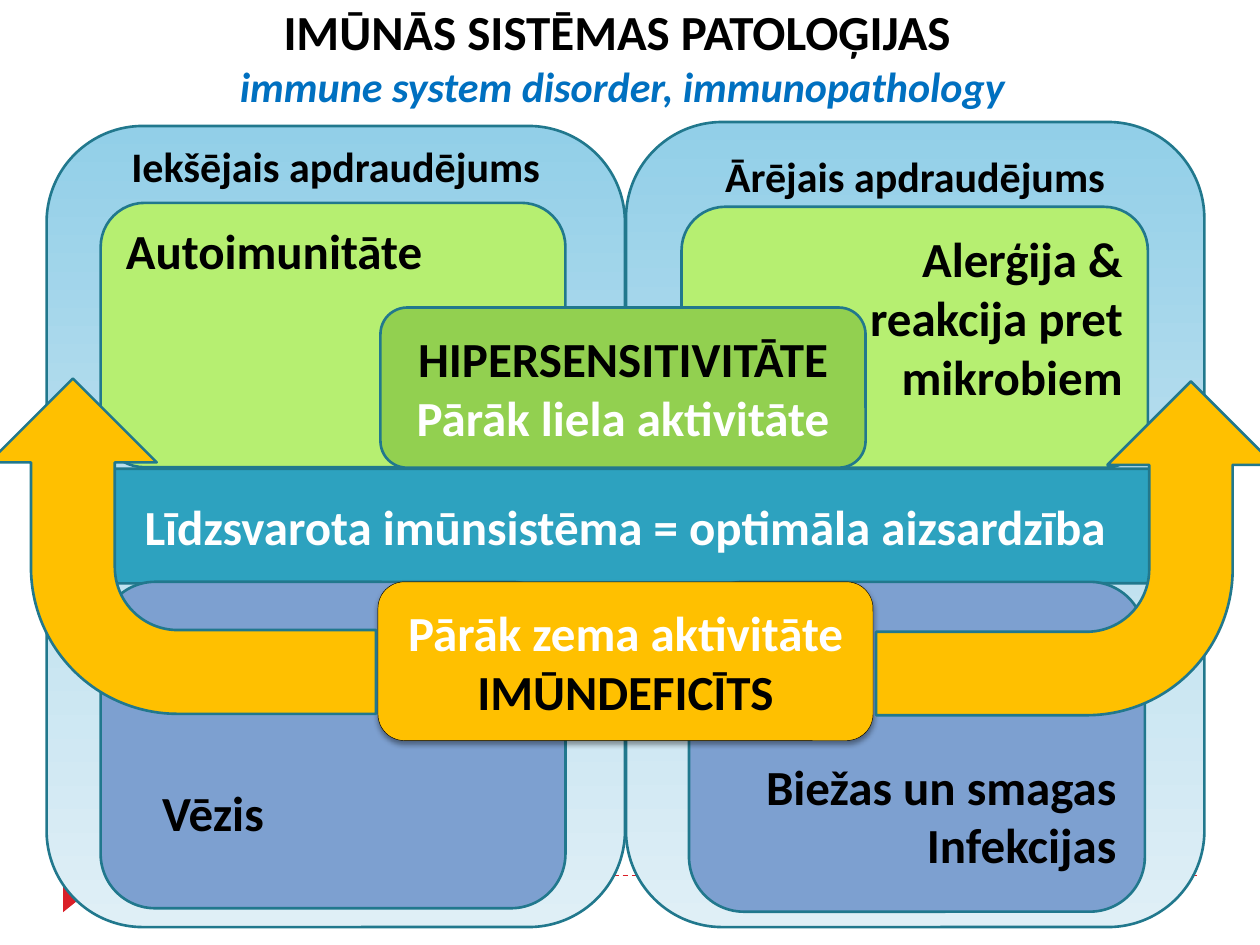
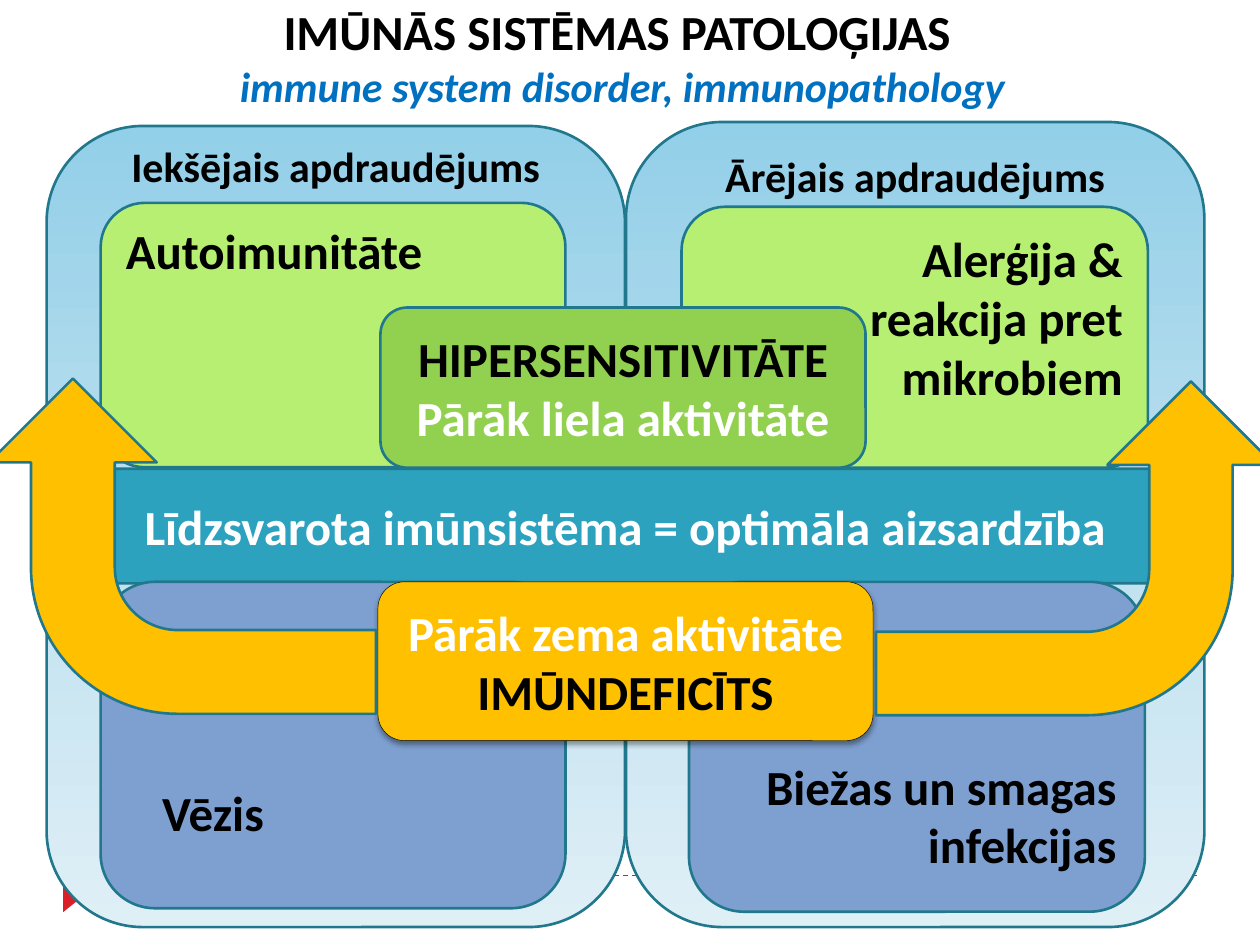
"""Build two slides that map disorders of the immune system."""
from copy import deepcopy
from dataclasses import dataclass

import lxml.etree
import pptx
import pptx.dml.color
import pptx.enum.dml
import pptx.enum.shapes
import pptx.enum.text
import pptx.oxml.ns
import pptx.util
from pptx.util import Cm

Align = pptx.enum.text.PP_ALIGN
Anchor = pptx.enum.text.MSO_ANCHOR
Preset = pptx.enum.shapes.MSO_SHAPE
qn = pptx.oxml.ns.qn


@dataclass(frozen=True)
class Theme:
    font: str = "Calibri"
    large: int = 28
    small: int = 24
    outline_width: float = 1.5
    black: str = "000000"
    white: str = "FFFFFF"
    subtitle: str = "0070C0"
    outline: str = "21788D"
    footer: str = "DA1F28"
    balance: str = "2DA2BF"
    overactive: str = "B6EF71"
    overactive_label: str = "92D050"
    underactive: str = "7DA0D0"
    deficiency: str = "FFC000"
    threat: tuple[str, ...] = ("92CFE8", "BDE0EF", "DFEFF6")


THEME = Theme()


@dataclass(frozen=True)
class Area:
    left: float
    top: float
    width: float
    height: float

    def lengths(self) -> tuple[int, ...]:
        return tuple(Cm(side) for side in (self.left, self.top, self.width, self.height))


@dataclass(frozen=True)
class Line:
    text: str
    color: str = THEME.black
    size: int = THEME.large
    italic: bool = False


@dataclass(frozen=True)
class Panel:
    area: Area
    fill: str | tuple[str, ...]
    lines: tuple[Line, ...]
    align: Align = Align.CENTER
    anchor: Anchor = Anchor.TOP
    inset_top: float = 0.13
    inset_left: float = 0.25
    outline: str = THEME.outline
    outline_width: float = THEME.outline_width
    shadow: bool = False


@dataclass(frozen=True)
class BentArrow:
    area: Area
    flipped: bool = False


TITLE_AREA = Area(1.12, 0.08, 22.86, 2.21)
TITLE = Line("IMŪNĀS SISTĒMAS PATOLOĢIJAS ")
SUBTITLE = Line("immune system disorder, immunopathology", THEME.subtitle, THEME.small, True)
ARROWS = (
    BentArrow(Area(0.3, 7.11, 6.76, 7.8)),
    BentArrow(Area(18.31, 7.04, 6.73, 8.03), flipped=True),
)


def immune_panels(infections: str) -> tuple[Panel, ...]:
    """List the panels from back to front."""
    return (
        Panel(Area(12.62, 2.46, 11.66, 16.23), THEME.threat,
              (Line("Ārējais apdraudējums", size=THEME.small),), inset_top=0),
        Panel(Area(0.94, 2.54, 11.66, 16.15), THEME.threat,
              (Line("Iekšējais apdraudējums", size=THEME.small),), inset_top=-0.28),
        Panel(Area(1.68, 9.45, 21.84, 2.31), THEME.balance,
              (Line("Līdzsvarota imūnsistēma = optimāla aizsardzība", THEME.white),),
              anchor=Anchor.MIDDLE),
        Panel(Area(13.74, 4.17, 9.4, 5.26), THEME.overactive,
              (Line("Alerģija &"), Line("reakcija pret mikrobiem")),
              Align.RIGHT, inset_top=0.18),
        Panel(Area(13.89, 11.73, 9.19, 6.65), THEME.underactive,
              (Line("Biežas un smagas"), Line(infections)), Align.RIGHT, inset_top=3.19),
        Panel(Area(2.03, 4.09, 9.37, 5.33), THEME.overactive,
              (Line("Autoimunitāte"),), Align.LEFT, inset_top=0.1),
        Panel(Area(2.03, 11.73, 9.37, 6.58), THEME.underactive,
              (Line("Vēzis"),), Align.LEFT, inset_top=3.73, inset_left=0.92),
        Panel(Area(7.62, 11.73, 9.98, 3.2), THEME.deficiency,
              (Line("Pārāk zema aktivitāte", THEME.white), Line("IMŪNDEFICĪTS")),
              anchor=Anchor.MIDDLE, outline=THEME.black, outline_width=0.25, shadow=True),
        Panel(Area(7.67, 6.2, 9.78, 3.23), THEME.overactive_label,
              (Line("HIPERSENSITIVITĀTE"), Line("Pārāk liela aktivitāte", THEME.white)),
              anchor=Anchor.MIDDLE),
    )


def rgb(color: str) -> pptx.dml.color.RGBColor:
    """Turn a hexadecimal colour into a colour object."""
    return pptx.dml.color.RGBColor.from_string(color)


def add_run(paragraph, line: Line) -> None:
    """Add one formatted run to a paragraph."""
    run = paragraph.add_run()
    run.text = line.text
    run.font.name = THEME.font
    run.font.size = pptx.util.Pt(line.size)
    run.font.bold = True
    run.font.italic = line.italic
    run.font.color.rgb = rgb(line.color)


def fill_gradient(shape, colors: tuple[str, ...]) -> None:
    """Fill a shape from top to bottom with evenly spaced colours."""
    shape.fill.gradient()
    shape.fill.gradient_angle = 270
    stop_list = shape.element.spPr.find(".//" + qn("a:gsLst"))
    while len(stop_list) < len(colors):
        stop_list.append(deepcopy(stop_list[0]))
    for index, (stop, color) in enumerate(zip(shape.fill.gradient_stops, colors)):
        stop.position = index / (len(colors) - 1)
        stop.color.rgb = rgb(color)


def add_shadow(shape) -> None:
    """Give a shape a soft shadow below it."""
    effects = shape.element.spPr.find(qn("a:effectLst"))
    shadow = lxml.etree.SubElement(
        effects, qn("a:outerShdw"), blurRad=str(pptx.util.Pt(3)),
        dist=str(pptx.util.Pt(2)), dir="5400000", rotWithShape="0")
    color = lxml.etree.SubElement(shadow, qn("a:srgbClr"), val=THEME.black)
    lxml.etree.SubElement(color, qn("a:alpha"), val="40000")


def add_outlined_shape(slide, preset: Preset, area: Area, fill: str | tuple[str, ...],
                       outline: str = THEME.outline, width: float = THEME.outline_width):
    """Add a preset shape with its fill and outline."""
    shape = slide.shapes.add_shape(preset, *area.lengths())
    if isinstance(fill, tuple):
        fill_gradient(shape, fill)
    else:
        shape.fill.solid()
        shape.fill.fore_color.rgb = rgb(fill)
    shape.line.color.rgb = rgb(outline)
    shape.line.width = pptx.util.Pt(width)
    shape.shadow.inherit = False
    return shape


def add_panel(slide, panel: Panel) -> None:
    """Add a rounded panel with its lines of text."""
    shape = add_outlined_shape(slide, Preset.ROUNDED_RECTANGLE, panel.area, panel.fill,
                               panel.outline, panel.outline_width)
    if panel.shadow:
        add_shadow(shape)
    frame = shape.text_frame
    frame.word_wrap = True
    frame.vertical_anchor = panel.anchor
    frame.margin_top = Cm(panel.inset_top)
    frame.margin_left = Cm(panel.inset_left)
    for index, line in enumerate(panel.lines):
        paragraph = frame.add_paragraph() if index else frame.paragraphs[0]
        paragraph.alignment = panel.align
        add_run(paragraph, line)


def add_bent_arrow(slide, arrow: BentArrow) -> None:
    """Add an arrow that bends upwards."""
    shape = add_outlined_shape(slide, Preset.BENT_ARROW, arrow.area, THEME.deficiency)
    shape.rotation = 270
    if arrow.flipped:
        shape.element.spPr.xfrm.set("flipV", "1")


def add_title(slide) -> None:
    """Add the title with its English subtitle."""
    frame = slide.shapes.add_textbox(*TITLE_AREA.lengths()).text_frame
    frame.word_wrap = True
    frame.vertical_anchor = Anchor.BOTTOM
    frame.margin_bottom = Cm(0.06)
    paragraph = frame.paragraphs[0]
    paragraph.alignment = Align.CENTER
    add_run(paragraph, TITLE)
    paragraph.add_line_break()
    add_run(paragraph, SUBTITLE)


def add_footer(slide) -> None:
    """Add the dashed footer line and its marker."""
    line = slide.shapes.add_connector(
        pptx.enum.shapes.MSO_CONNECTOR.STRAIGHT, Cm(1.27), Cm(17.65), Cm(24.13), Cm(17.65))
    line.line.color.rgb = rgb(THEME.footer)
    line.line.width = pptx.util.Pt(0.75)
    line.line.dash_style = pptx.enum.dml.MSO_LINE.DASH
    lxml.etree.SubElement(line.element.spPr, qn("a:effectLst"))
    marker = add_outlined_shape(slide, Preset.ISOSCELES_TRIANGLE,
                                Area(1.17, 17.96, 0.53, 0.33), THEME.footer)
    marker.line.fill.background()
    marker.rotation = 90


def add_immune_slide(presentation, infections: str) -> None:
    """Add one slide with the whole map."""
    slide = presentation.slides.add_slide(presentation.slide_layouts[6])
    add_footer(slide)
    for panel in immune_panels(infections):
        add_panel(slide, panel)
    add_title(slide)
    for arrow in ARROWS:
        add_bent_arrow(slide, arrow)


def main() -> None:
    """Build and save the presentation."""
    presentation = pptx.Presentation()
    presentation.slide_width = Cm(25.4)
    presentation.slide_height = Cm(19.05)
    for infections in ("Infekcijas", "infekcijas"):
        add_immune_slide(presentation, infections)
    presentation.save("out.pptx")


if __name__ == "__main__":
    main()
